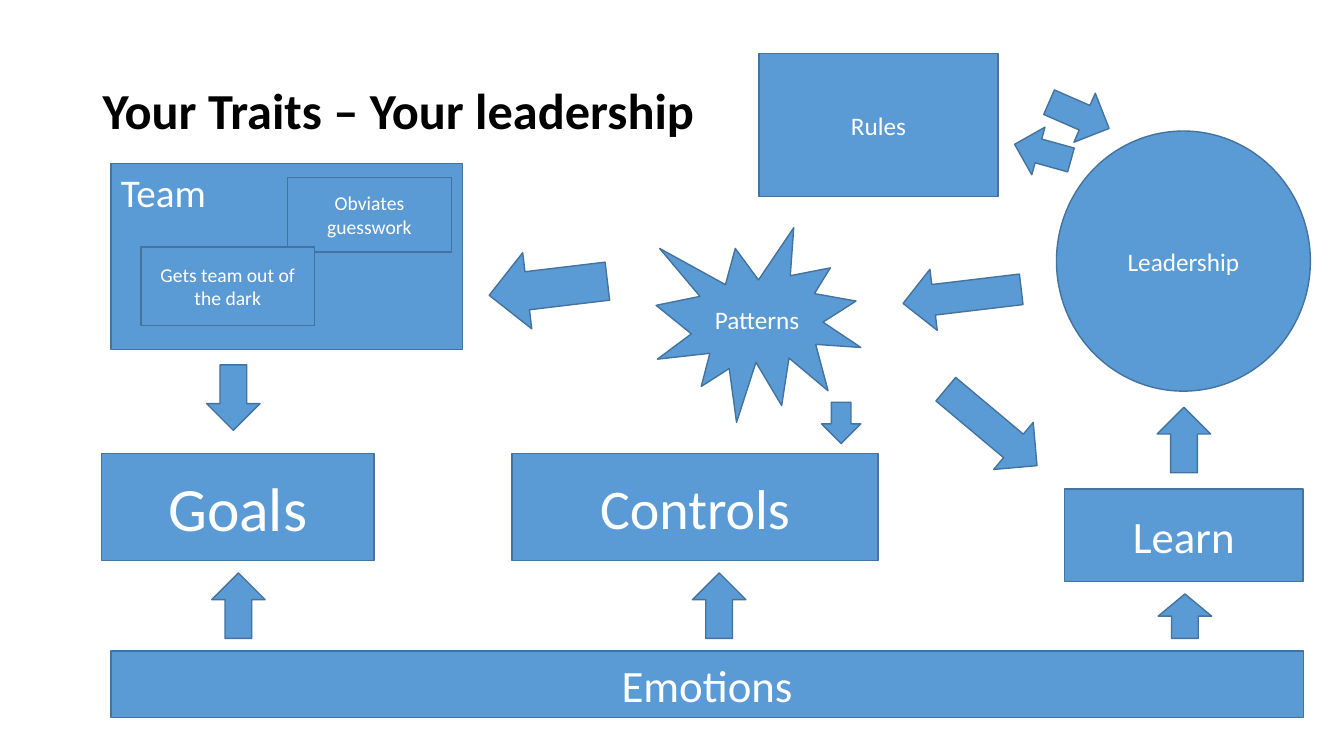
import collections

import pptx
import pptx.dml.color
import pptx.enum.shapes
import pptx.enum.text
import pptx.util

Pt = pptx.util.Pt
Kind = pptx.enum.shapes.MSO_SHAPE
Align = pptx.enum.text.PP_ALIGN
Anchor = pptx.enum.text.MSO_ANCHOR
Box = collections.namedtuple("Box", "left top width height")

COLORS = {"fill": "5B9BD5", "line": "43739E", "light": "FFFFFF", "dark": "000000"}
FONT = "Calibri"
ARROW_WIDTH, ARROW_HEIGHT = 38.2, 46.8
LONG_ARROW = 85
CARD_HEIGHT = 76.3


def color(name):
    """Return the named palette colour."""
    return pptx.dml.color.RGBColor.from_string(COLORS[name])


def within(box, left, top, width, height):
    """Return a box offset from the corner of another box."""
    return Box(box.left + left, box.top + top, width, height)


def write_text(shape, text, size=18, ink="light", bold=False,
               align=Align.CENTER, anchor=Anchor.MIDDLE, spacing=None):
    """Write text into a shape, one paragraph for each line."""
    frame = shape.text_frame
    frame.word_wrap = True
    frame.vertical_anchor = anchor
    frame.text = text
    for paragraph in frame.paragraphs:
        paragraph.alignment = align
        paragraph.line_spacing = spacing
        font = paragraph.runs[0].font
        font.name = FONT
        font.size = Pt(size)
        font.bold = bold
        font.color.rgb = color(ink)


def add_block(slide, kind, box, text="", rotation=0, **text_format):
    """Draw a filled, outlined shape with optional text."""
    shape = slide.shapes.add_shape(kind, *map(Pt, box))
    shape.shadow.inherit = False
    shape.rotation = rotation
    shape.fill.solid()
    shape.fill.fore_color.rgb = color("fill")
    shape.line.color.rgb = color("line")
    shape.line.width = Pt(1)
    if text:
        write_text(shape, text, **text_format)


def add_title(slide, box):
    """Place the slide heading."""
    heading = slide.shapes.add_textbox(*map(Pt, box))
    write_text(heading, "Your Traits – Your leadership", size=36, ink="dark",
               bold=True, align=Align.LEFT, spacing=0.9)


def add_team_column(slide, box):
    """Draw the team panel with its two notes, leading down to the goals."""
    add_block(slide, Kind.RECTANGLE, within(box, 6.5, 0, 251.3, 133.2), "Team",
              size=28, align=Align.LEFT, anchor=Anchor.TOP)
    add_block(slide, Kind.RECTANGLE, within(box, 132.5, 10.1, 117.4, 53.3),
              "Obviates\nguesswork", size=14)
    add_block(slide, Kind.RECTANGLE, within(box, 28.1, 59.8, 123.8, 56.2),
              "Gets team out of the dark", size=14)
    add_block(slide, Kind.DOWN_ARROW, within(box, 74.9, 144, ARROW_WIDTH, ARROW_HEIGHT))
    add_block(slide, Kind.RECTANGLE,
              within(box, 0, box.height - CARD_HEIGHT, 194.4, CARD_HEIGHT),
              "Goals", size=44)


def add_pattern_column(slide, box):
    """Draw the patterns burst, the arrows around it and the controls."""
    add_block(slide, Kind.EXPLOSION1, within(box, 104.4, 0, 146.2, 139), "Patterns")
    for left, top, width, height, rotation in (
            (0, 0.7, 54.7, LONG_ARROW, 83.2),
            (301, 6.5, 43.9, LONG_ARROW, 83.2),
            (321.9, 100.1, 43.9, LONG_ARROW, 310),
            (222.5, 124.6, 28.1, 29.5, 0)):
        add_block(slide, Kind.DOWN_ARROW, within(box, left, top, width, height),
                  rotation=rotation)
    add_block(slide, Kind.RECTANGLE,
              within(box, 1.5, box.height - CARD_HEIGHT, 261.4, CARD_HEIGHT),
              "Controls", size=40)


def add_leadership_column(slide, box):
    """Draw rules, leadership and learning with the arrows between them."""
    card_width = 170.6
    add_block(slide, Kind.OVAL, within(box, 212.4, 55.4, 181.4, 185.8), "Leadership")
    add_block(slide, Kind.RECTANGLE, within(box, 0, 0, card_width, 102.2), "Rules")
    add_block(slide, Kind.UP_ARROW, within(box, 209.5, 20.8, ARROW_WIDTH, ARROW_HEIGHT),
              rotation=113.6)
    add_block(slide, Kind.DOWN_ARROW, within(box, 185, 49.6, 35.3, 41.8), rotation=105.5)
    add_block(slide, Kind.UP_ARROW, within(box, 284.4, 252.7, ARROW_WIDTH, ARROW_HEIGHT))
    add_block(slide, Kind.RECTANGLE, within(box, 218.1, 311, card_width, 66.2),
              "Learn", size=32)


def add_foundation(slide, box):
    """Draw the emotions bar and the arrows rising from it."""
    bar_height, gap = 47.5, 9.1
    bar_top = box.height - bar_height
    add_block(slide, Kind.RECTANGLE, within(box, 0, bar_top, box.width, bar_height),
              "Emotions", size=32)
    for left, height in ((72, ARROW_HEIGHT), (415.4, ARROW_HEIGHT), (748.1, 31.7)):
        add_block(slide, Kind.UP_ARROW,
                  within(box, left, bar_top - gap - height, ARROW_WIDTH, height))


def main():
    """Build the slide and save it."""
    presentation = pptx.Presentation()
    presentation.slide_width = Pt(960)
    presentation.slide_height = Pt(540)
    slide = presentation.slides.add_slide(presentation.slide_layouts[6])
    add_title(slide, Box(66.2, 28.8, 828, 104.4))
    add_leadership_column(slide, Box(542.2, 38.2, 393.8, 377.2))
    add_foundation(slide, Box(79.2, 409.2, 851.8, 103.4))
    add_team_column(slide, Box(72.7, 116.6, 257.8, 283.7))
    add_pattern_column(slide, Box(364.3, 162.7, 365.8, 237.6))
    presentation.save("out.pptx")


if __name__ == "__main__":
    main()
